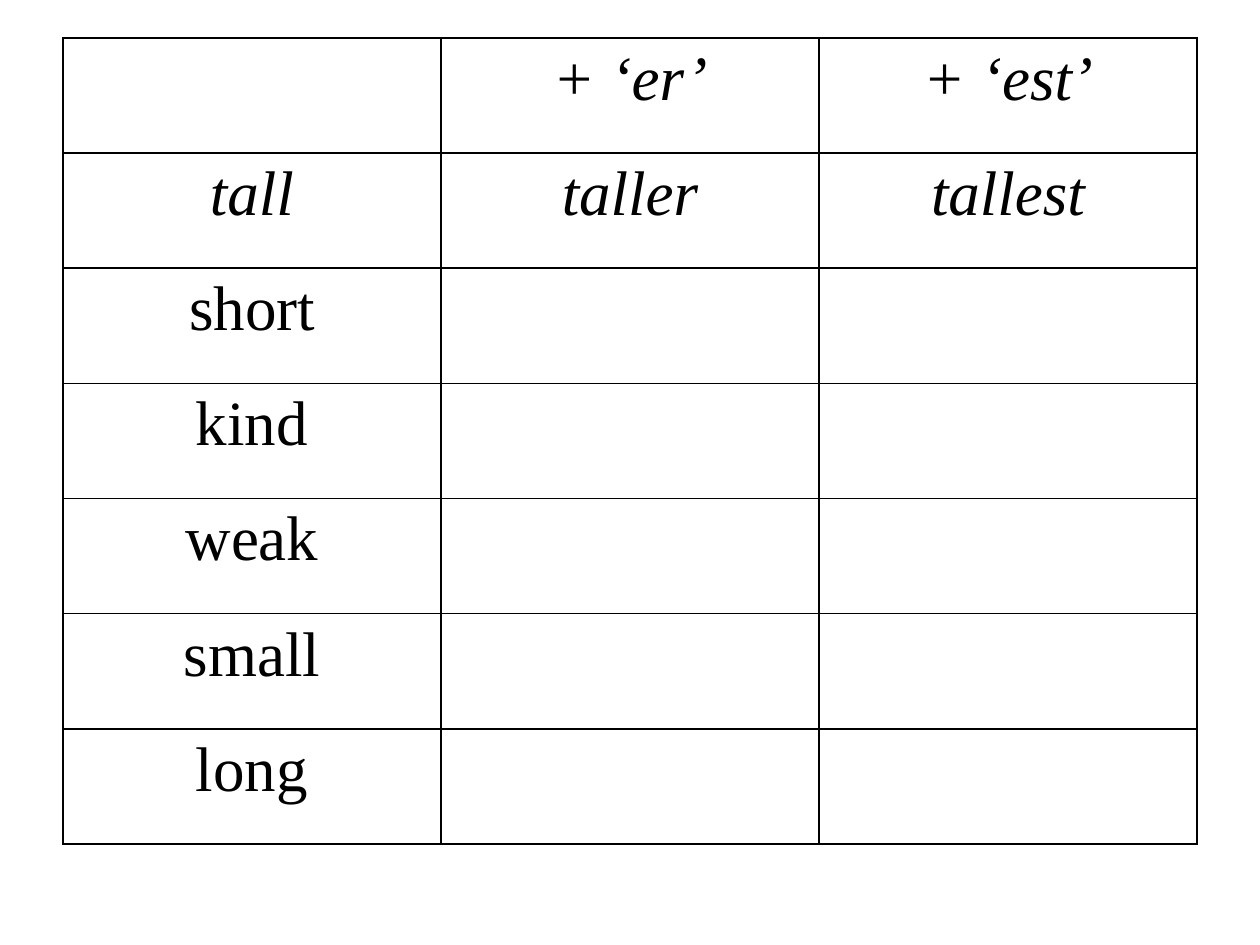
"""Build a slide with a comparative and superlative adjective table."""
from lxml import etree
from pptx import Presentation
from pptx.dml.color import RGBColor
from pptx.enum.text import PP_ALIGN
from pptx.oxml.ns import qn
from pptx.util import Inches, Pt

CENTER = PP_ALIGN.CENTER
COLORS = {"ink": "000000"}
FONT = {"name": "Times New Roman", "size": Pt(36), "bold": False}
INDENT = {"marL": Inches(0.38), "indent": Inches(-0.38)}
SIDES = ("a:lnL", "a:lnR", "a:lnT", "a:lnB")
WORDS = [
    ("", "+ ‘er’", "+ ‘est’"),
    ("tall", "taller", "tallest"),
    ("short", "", ""),
    ("kind", "", ""),
    ("weak", "", ""),
    ("small", "", ""),
    ("long", "", ""),
]
MODELS = 2


def add_lines(cell):
    props = cell._tc.get_or_add_tcPr()
    for side in SIDES:
        line = etree.SubElement(props, qn(side), w=str(Pt(1)))
        fill = etree.SubElement(line, qn("a:solidFill"))
        etree.SubElement(fill, qn("a:srgbClr"), val=COLORS["ink"])


def add_word(cell, word, italic):
    para = cell.text_frame.paragraphs[0]
    para.alignment = CENTER
    for key, value in INDENT.items():
        para._p.get_or_add_pPr().set(key, str(value))
    run = para.add_run()
    run.text = word
    for key, value in FONT.items():
        setattr(run.font, key, value)
    run.font.italic = italic
    run.font.color.rgb = RGBColor.from_string(COLORS["ink"])


prs = Presentation()
prs.slide_width, prs.slide_height = Inches(10), Inches(7.5)
slide = prs.slides.add_slide(prs.slide_layouts[6])

table = slide.shapes.add_table(
    len(WORDS), len(WORDS[0]), Inches(0.5), Inches(0.3), Inches(9), Inches(6.4)
).table
table.first_row = False
table.horz_banding = False

for r, row in enumerate(WORDS):
    for c, word in enumerate(row):
        cell = table.cell(r, c)
        add_lines(cell)
        cell.fill.background()
        if word:
            add_word(cell, word, r < MODELS)

prs.save("out.pptx")
